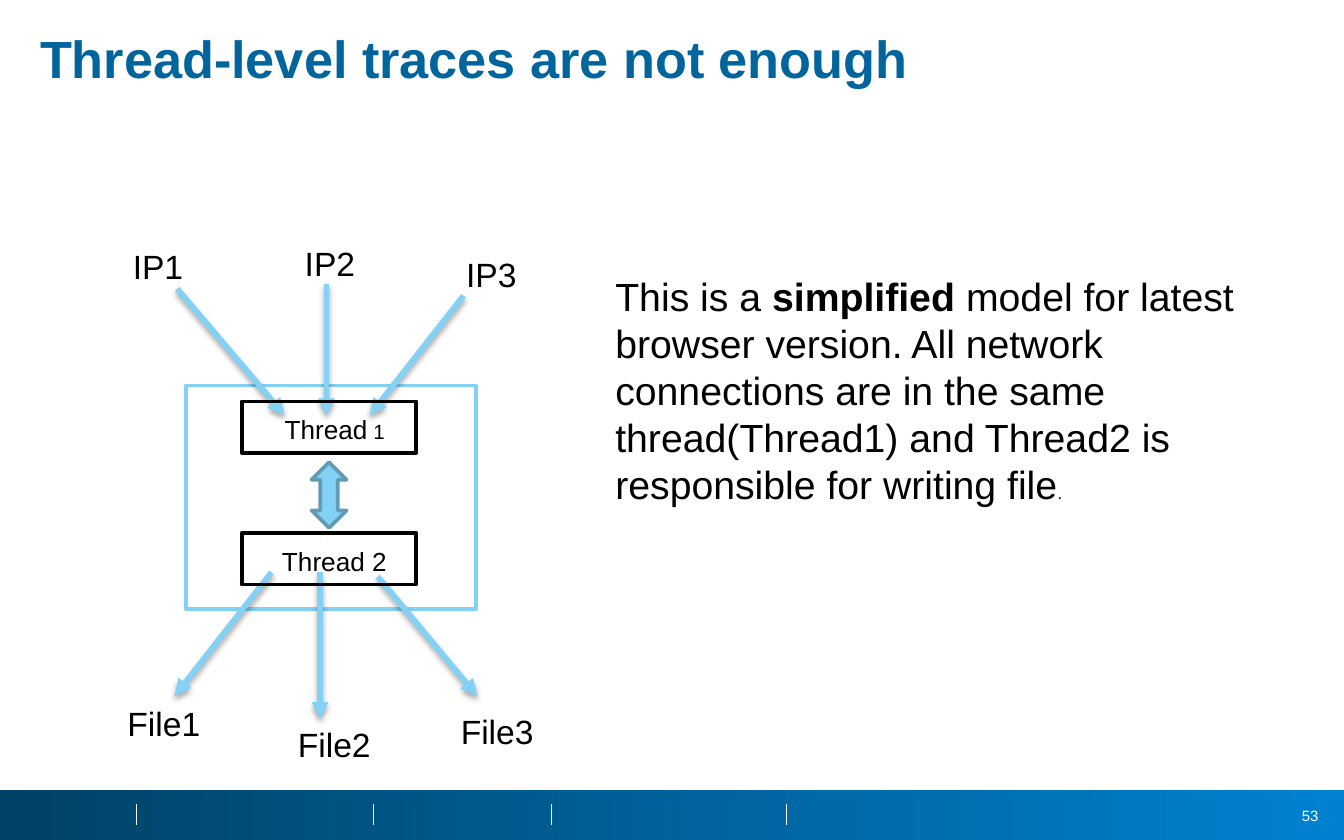
from lxml import etree
from pptx import Presentation
from pptx.dml.color import RGBColor
from pptx.enum.shapes import MSO_CONNECTOR, MSO_SHAPE
from pptx.enum.text import MSO_ANCHOR, PP_ALIGN
from pptx.oxml import parse_xml
from pptx.oxml.ns import nsdecls, qn
from pptx.util import Cm, Pt

RECT = MSO_SHAPE.RECTANGLE
UP_DOWN_ARROW = MSO_SHAPE.UP_DOWN_ARROW
STRAIGHT = MSO_CONNECTOR.STRAIGHT
MIDDLE = MSO_ANCHOR.MIDDLE
RIGHT = PP_ALIGN.RIGHT

FONT = "Arial"
BLACK = RGBColor(0x00, 0x00, 0x00)
WHITE = RGBColor(0xFF, 0xFF, 0xFF)
TITLE_BLUE = RGBColor(0x00, 0x64, 0x9D)
SKY = RGBColor(0x83, 0xD1, 0xF5)
SKY_DARK = RGBColor(0x61, 0x9B, 0xB5)
FOOTER_DARK = RGBColor(0x00, 0x42, 0x66)
FOOTER_LIGHT = RGBColor(0x00, 0x81, 0xD0)
DIVIDER = RGBColor(0xF2, 0xF2, 0xF2)

DIVIDERS = [2.57, 7.06, 10.41, 14.86]
LABELS = [
    ("IP1", 2.26, 4.52, 2.11),
    ("IP2", 5.51, 4.47, 1.63),
    ("IP3", 8.56, 4.67, 2.01),
    ("File1", 2.16, 13.16, 2.21),
    ("File2", 5.38, 13.56, 2.16),
    ("File3", 8.46, 13.31, 2.69),
]
ARROWS = [
    (3.35, 5.46, 5.38, 7.85),
    (6.17, 5.36, 6.17, 7.85),
    (8.76, 5.59, 6.99, 7.85),
    (5.13, 10.82, 3.3, 13.16),
    (6.05, 10.82, 6.05, 13.59),
    (7.14, 10.9, 9.02, 13.16),
]
THREADS = [
    (7.59, 5.13, 2.49, [("Thread", 14, False), (" 1", 11, False)]),
    (10.08, 5.08, 2.49, [("Thread 2", 14, False)]),
]
NOTE = [
    ("This is a ", 21, False),
    ("simplified", 21, True),
    (" model for latest browser version. All network connections are in the "
     "same thread(Thread1) and Thread2 is responsible for writing file", 21, False),
    (".", 9, False),
]


def add_text(s, x, y, w, h, runs, color=BLACK, wrap=True):
    tf = s.shapes.add_textbox(Cm(x), Cm(y), Cm(w), Cm(h)).text_frame
    tf.word_wrap = wrap
    p = tf.paragraphs[0]
    for text, size, bold in runs:
        r = p.add_run()
        r.text = text
        r.font.name = FONT
        r.font.size = Pt(size)
        r.font.bold = bold
        r.font.color.rgb = color
    return tf


def add_box(s, shape, x, y, w, h, fill=None, line=None):
    sp = s.shapes.add_shape(shape, Cm(x), Cm(y), Cm(w), Cm(h))
    sp.shadow.inherit = False
    if fill is None:
        sp.fill.background()
    else:
        sp.fill.solid()
        sp.fill.fore_color.rgb = fill
    if line is None:
        sp.line.fill.background()
    else:
        sp.line.color.rgb = line
        sp.line.width = Pt(2)
    return sp


def add_line(s, x1, y1, x2, y2, color, width):
    c = s.shapes.add_connector(STRAIGHT, Cm(x1), Cm(y1), Cm(x2), Cm(y2))
    c.line.color.rgb = color
    c.line.width = Pt(width)
    etree.SubElement(c._element.spPr, qn("a:effectLst"))
    return c


def add_arrow(s, x1, y1, x2, y2):
    c = add_line(s, x1, y1, x2, y2, SKY, 3)
    spPr = c._element.spPr
    etree.SubElement(spPr.find(qn("a:ln")), qn("a:tailEnd"), type="triangle")
    spPr.find(qn("a:effectLst")).append(parse_xml(
        f'<a:outerShdw {nsdecls("a")} blurRad="40000" dist="23000" '
        'dir="5400000" rotWithShape="0"><a:srgbClr val="000000">'
        '<a:alpha val="35000"/></a:srgbClr></a:outerShdw>'))


def add_footer(s):
    bar = add_box(s, RECT, 0, 14.93, 25.4, 0.95)
    bar.fill.gradient()
    bar.fill.gradient_angle = 0
    stops = zip(bar.fill.gradient_stops, (FOOTER_DARK, FOOTER_LIGHT), (0, 1))
    for stop, color, position in stops:
        stop.color.rgb = color
        stop.position = position
    tf = add_text(s, 24.1, 15.11, 1.07, 0.61, [("53", 8, False)], WHITE)
    tf.vertical_anchor = MIDDLE
    tf.paragraphs[0].alignment = RIGHT
    for x in DIVIDERS:
        add_line(s, x, 15.19, x, 15.6, DIVIDER, 0.25)


def add_title(s, text):
    tf = add_text(s, 0.51, 0.51, 24.26, 0.91, [(text, 28, True)], TITLE_BLUE)
    tf.paragraphs[0].line_spacing = 0.9


def add_thread(s, y, text_x, text_w, runs):
    add_box(s, RECT, 4.57, y, 3.3, 0.97, line=BLACK)
    add_text(s, text_x, y + 0.1, text_w, 0.86, runs, wrap=False)


def main():
    prs = Presentation()
    prs.slide_width, prs.slide_height = Cm(25.4), Cm(15.88)
    s = prs.slides.add_slide(prs.slide_layouts[6])
    add_footer(s)
    add_box(s, RECT, 3.51, 7.29, 5.49, 4.22, WHITE, SKY)
    add_title(s, "Thread-level traces are not enough")
    for arrow in ARROWS:
        add_arrow(s, *arrow)
    for text, x, y, w in LABELS:
        add_text(s, x, y, w, 1.02, [(text, 18, False)])
    for thread in THREADS:
        add_thread(s, *thread)
    add_box(s, UP_DOWN_ARROW, 5.89, 8.74, 0.66, 1.24, SKY, SKY_DARK)
    add_text(s, 11.38, 5.03, 13.21, 4.75, NOTE)
    prs.save("out.pptx")


if __name__ == "__main__":
    main()
